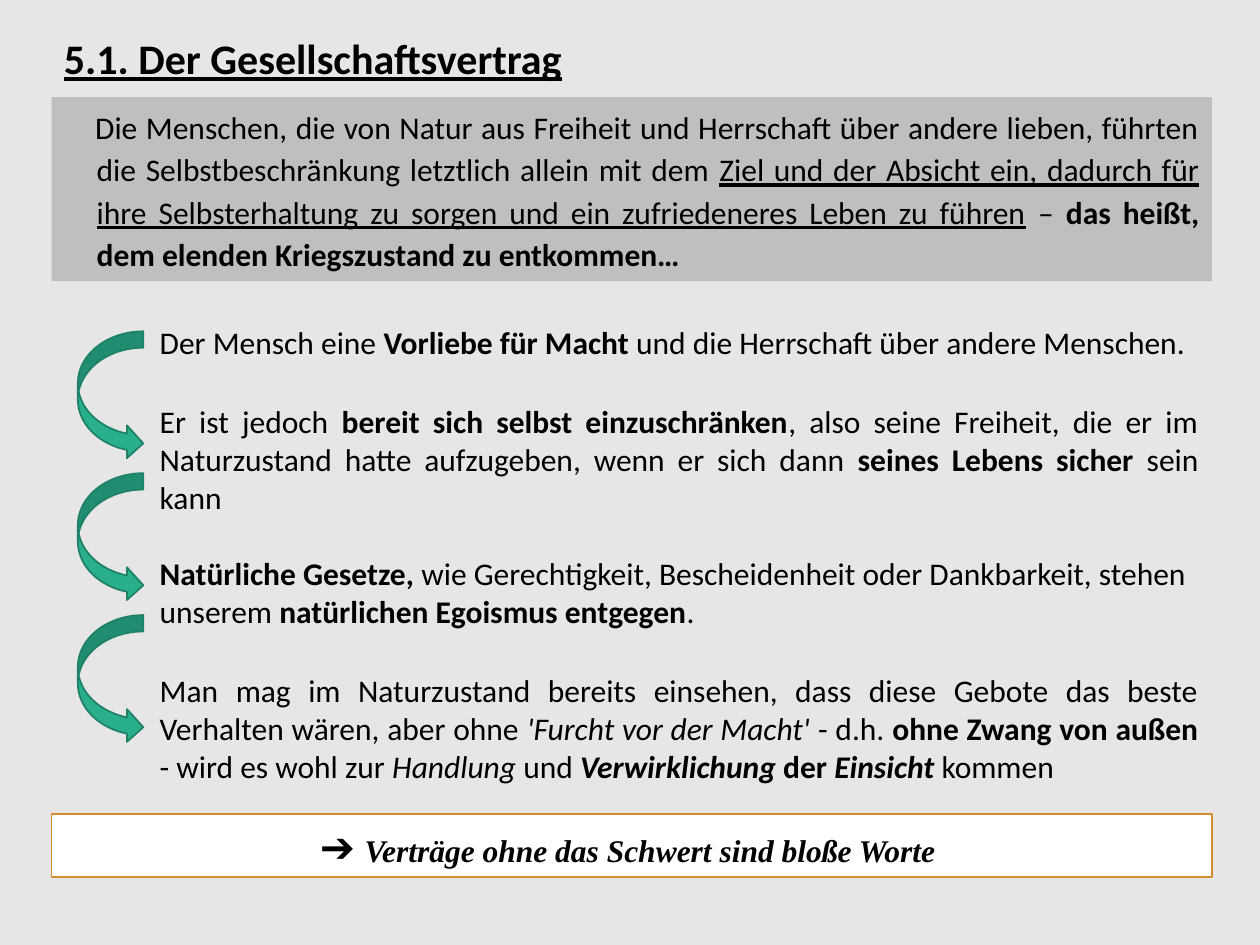
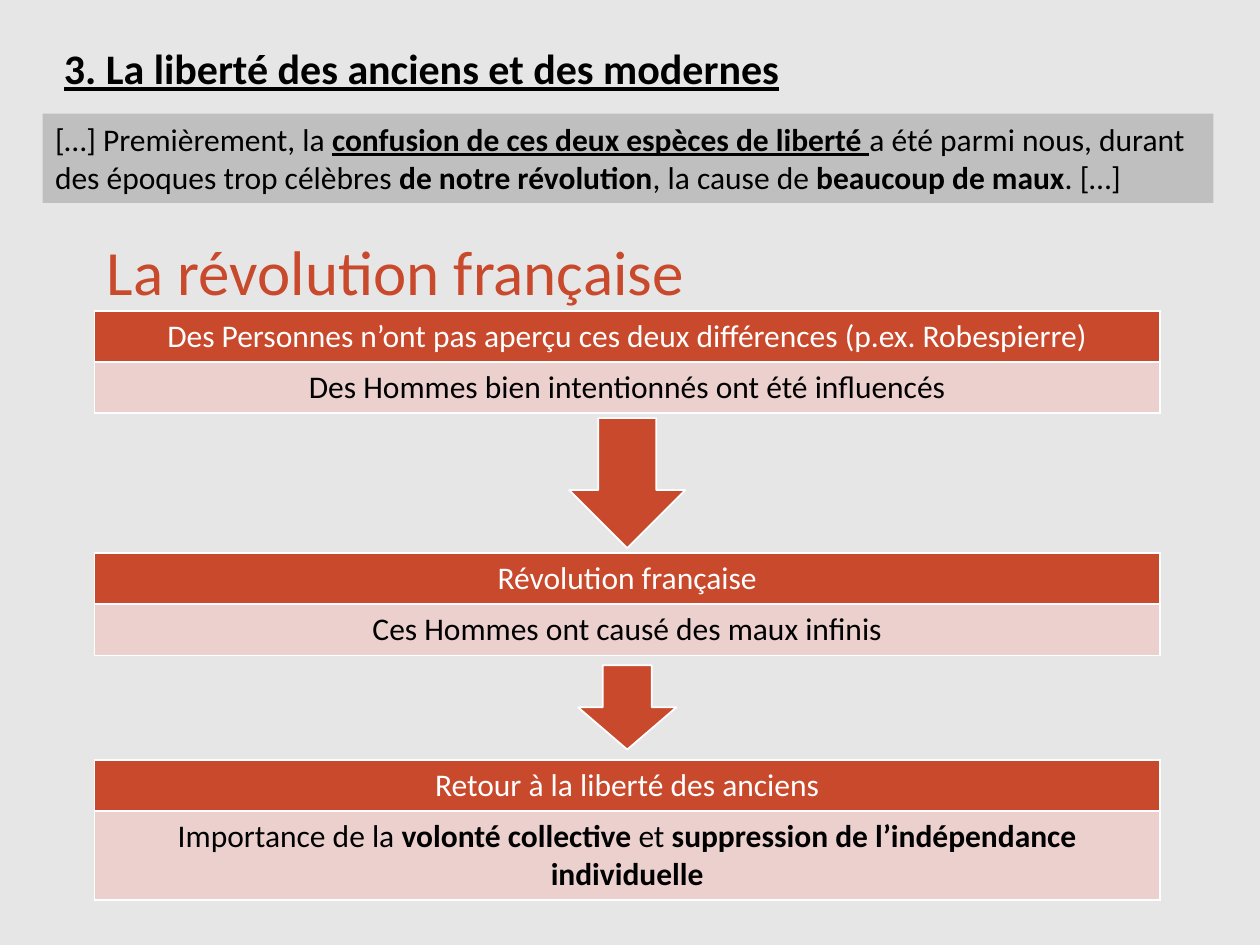
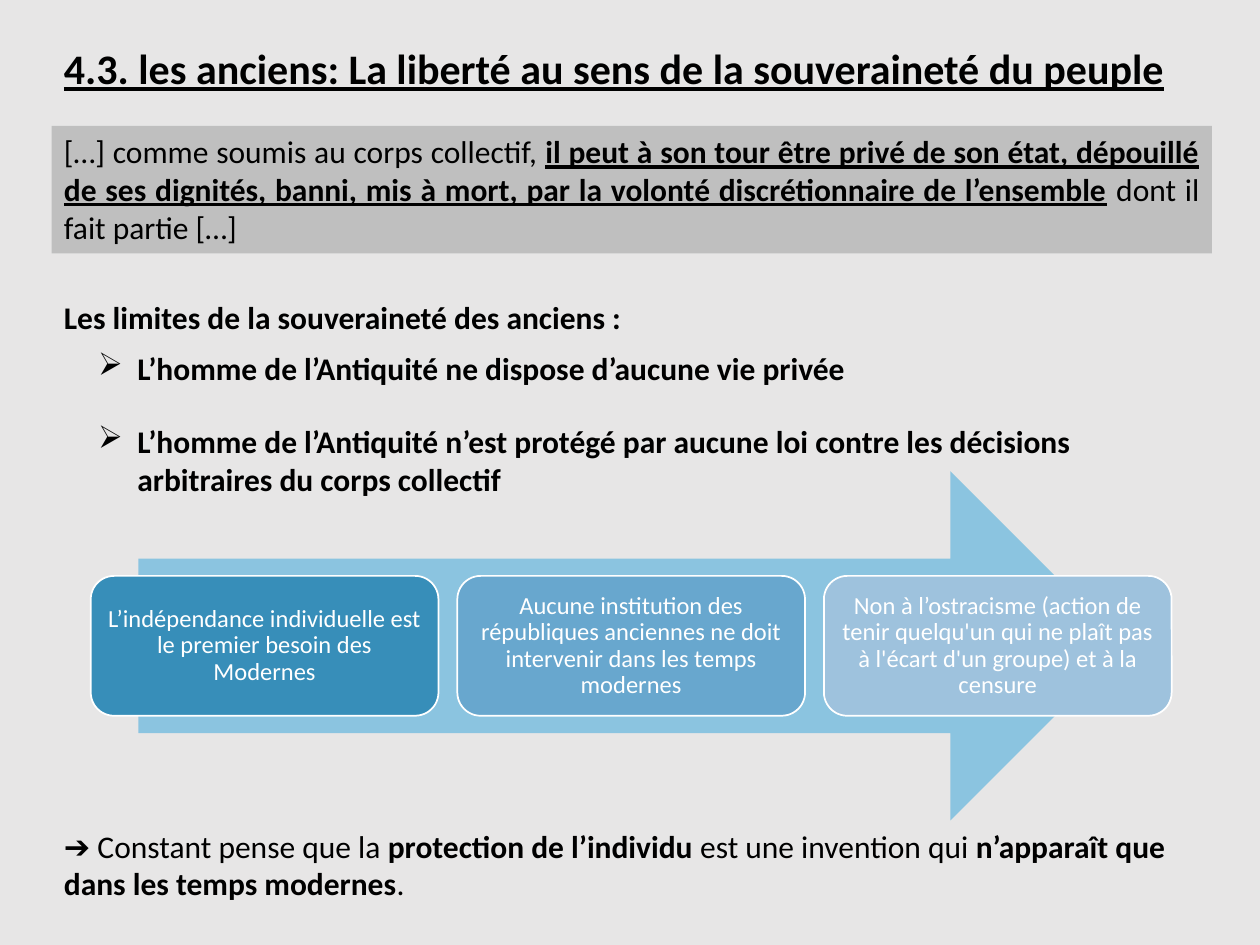
from lxml.etree import SubElement
from pptx import Presentation
from pptx.dml.color import RGBColor
from pptx.enum.shapes import MSO_SHAPE as SHAPE
from pptx.enum.text import MSO_ANCHOR as ANCHOR, MSO_AUTO_SIZE as AUTO, PP_ALIGN as ALIGN
from pptx.oxml.ns import qn
from pptx.util import Cm, Pt

rgb = RGBColor.from_string
BACK, QUOTE, BLACK, WHITE = "E7E6E6", "BFBFBF", "000000", "FFFFFF"
RED, PINK = "C9492C", "EBD0CD"
GREEN, DARK_GREEN, ORANGE = "29AF8C", "1E8168", "D58C2E"
LEFT, WIDTH = 1.04, 23.39
TITLE = dict(size=24, style="bu", wrap=False)


def write(tf, text, size=18, color=BLACK, font="Calibri", style="", align=None,
          spacing=None, indent=None, bullet=None, wrap=True, auto=AUTO.SHAPE_TO_FIT_TEXT):
    """Fill a text frame; text is a string or a list of strings and (string, style) pairs."""
    if hasattr(tf, "auto_size"):
        tf.word_wrap, tf.auto_size = wrap, auto
    p = tf.paragraphs[0]
    pPr = p._p.get_or_add_pPr()
    if bullet:
        SubElement(pPr, qn("a:buChar"), char=bullet)
    if indent:
        pPr.set("marL", str(Cm(indent[0])))
        pPr.set("indent", str(Cm(indent[1])))
    p.alignment, p.line_spacing = align, spacing
    for part in [text] if isinstance(text, str) else text:
        words, flags, *face = (part, style) if isinstance(part, str) else part
        r = p.add_run()
        r.text = words
        r.font.name, r.font.size = (face or [font])[0], Pt(size)
        r.font.color.rgb = rgb(color)
        r.font.bold, r.font.italic, r.font.underline = ("b" in flags, "i" in flags, "u" in flags)
    return p


def add_box(s, x, y, w, h, kind=None, fill=None, line=None):
    """Add a text box, or a preset shape if a kind is given; lengths in cm."""
    place = Cm(x), Cm(y), Cm(w), Cm(h)
    if kind is None:
        return s.shapes.add_textbox(*place).text_frame
    sp = s.shapes.add_shape(kind, *place)
    sp.shadow.inherit = False
    sp.fill.solid()
    sp.fill.fore_color.rgb = rgb(fill)
    if line:
        sp.line.color.rgb, sp.line.width = rgb(line), Pt(1)
    else:
        sp.line.fill.background()
    sp.text_frame.vertical_anchor = ANCHOR.TOP
    return sp.text_frame


prs = Presentation()
prs.slide_width, prs.slide_height = Cm(25.4), Cm(19.05)

# Slides with background, title and quotation band
openings = [
    ("5.1. Der Gesellschaftsvertrag", (0.53, 10.67), (LEFT, 1.96, WIDTH, 3.71),
     ["Die Menschen, die von Natur aus Freiheit und Herrschaft über andere lieben, führten "
      "die Selbstbeschränkung letztlich allein mit dem ",
      ("Ziel und der Absicht ein, dadurch für ihre Selbsterhaltung zu sorgen und ein "
       "zufriedeneres Leben zu führen", "u"), " – ",
      ("das heißt, dem elenden Kriegszustand zu entkommen…", "b")],
     dict(align=ALIGN.JUSTIFY, indent=(0.66, -0.03), spacing=1.12)),
    ("3. La liberté des anciens et des modernes", (0.74, 15.24), (0.86, 2.29, 23.6, 1.8),
     ["[…] Premièrement, la ", ("confusion de ces deux espèces de liberté ", "bu"),
      "a été parmi nous, durant des époques trop célèbres ", ("de notre révolution", "b"),
      ", la cause de ", ("beaucoup de maux", "b"), ". […]"], {}),
    ("4.3. les anciens: La liberté au sens de la souveraineté du peuple", (0.74, 22.91),
     (LEFT, 2.54, WIDTH, 2.57),
     ["[…] comme soumis au corps collectif, ",
      ("il peut à son tour être privé de son état, dépouillé de ses dignités, banni, mis à "
       "mort, par la volonté discrétionnaire de l’ensemble", "bu"),
      " dont il fait partie […]"], dict(align=ALIGN.JUSTIFY)),
]
slides = []
for title, (top, width), band, quote, quote_format in openings:
    s = prs.slides.add_slide(prs.slide_layouts[6])
    s.background.fill.solid()
    s.background.fill.fore_color.rgb = rgb(BACK)
    write(add_box(s, LEFT, top, width, 1.27), title, **TITLE)
    write(add_box(s, *band, SHAPE.RECTANGLE, QUOTE), quote, **quote_format)
    slides.append(s)
contract, revolution, ancients = slides

# Slide 1: steps of the argument
steps = [
    (6.38, 1.8, None, ["Der Mensch eine ", ("Vorliebe für Macht ", "b"),
                       "und die Herrschaft über andere Menschen."]),
    (7.98, 2.57, ALIGN.JUSTIFY,
     ["Er ist jedoch ", ("bereit sich selbst einzuschränken", "b"),
      ", also seine Freiheit, die er im Naturzustand hatte aufzugeben, wenn er sich dann ",
      ("seines Lebens sicher ", "b"), "sein kann "]),
    (11.05, 1.8, None,
     [("Natürliche Gesetze, ", "b"),
      "wie Gerechtigkeit, Bescheidenheit oder Dankbarkeit, stehen unserem ",
      ("natürlichen Egoismus entgegen", "b"), "."]),
    (13.41, 2.57, ALIGN.JUSTIFY,
     ["Man mag im Naturzustand bereits einsehen, dass diese Gebote das beste Verhalten "
      "wären, aber ohne ", ("'Furcht vor der Macht'", "i"), " - d.h. ",
      ("ohne Zwang von außen ", "b"), "- wird es wohl zur ", ("Handlung", "i"), " und ",
      ("Verwirklichung", "bi"), (" der ", "b"), ("Einsicht ", "bi"), "kommen"]),
]
for top, height, align, text in steps:
    write(add_box(contract, 2.97, top, 21.44, height), text, align=align)
for i in range(3):
    add_box(contract, 1.57, 6.68 + 2.86 * i, 1.32, 2.59,
            SHAPE.CURVED_RIGHT_ARROW, GREEN, DARK_GREEN)

# Slide 1: conclusion
tf = add_box(contract, LEFT, 16.41, WIDTH, 1.27, SHAPE.RECTANGLE, WHITE, ORANGE)
p = write(tf, [("➔ ", "b"), ("Verträge ohne das Schwert sind bloße Worte ", "bi", "Times New Roman")],
          align=ALIGN.CENTER)
p.runs[0].font.size = Pt(24)

# Slide 2: three stages as tables
TABLE_LEFT, TABLE_WIDTH, ROW = 1.9, 21.49, 1.03
write(add_box(revolution, TABLE_LEFT, 4.57, 12.27, 1.8), "La révolution française",
      size=36, color=RED, wrap=False)
stages = [
    (6.27, ROW, "Des Personnes n’ont pas aperçu ces deux différences (p.ex. Robespierre)",
     "Des Hommes bien intentionnés ont été influencés"),
    (11.15, ROW, "Révolution française", "Ces Hommes ont causé des maux infinis"),
    (15.32, 1.79, "Retour à la liberté des anciens",
     ["Importance de la ", ("volonté collective ", "b"), "et ",
      ("suppression de l’indépendance individuelle", "b")]),
]
for top, body_height, head, body in stages:
    table = revolution.shapes.add_table(2, 1, Cm(TABLE_LEFT), Cm(top), Cm(TABLE_WIDTH),
                                        Cm(ROW + body_height)).table
    table.first_row = table.horz_banding = False
    rows = [(head, ROW, RED, WHITE), (body, body_height, PINK, BLACK)]
    for i, (text, height, fill, color) in enumerate(rows):
        table.rows[i].height = Cm(height)
        cell = table.cell(i, 0)
        tcPr = cell._tc.get_or_add_tcPr()
        for side in "LRTB":
            ln = SubElement(tcPr, qn(f"a:ln{side}"), w=str(Pt(1)))
            SubElement(SubElement(ln, qn("a:solidFill")), qn("a:srgbClr"), val=WHITE)
        cell.fill.solid()
        cell.fill.fore_color.rgb = rgb(fill)
        write(cell.text_frame, text, color=color, align=ALIGN.CENTER, wrap=None, auto=None)

# Slide 2: arrows centred between the tables
for top, width, height in [(8.43, 2.34, 2.62), (13.41, 1.98, 1.7)]:
    add_box(revolution, TABLE_LEFT + (TABLE_WIDTH - width) / 2, top, width, height,
            SHAPE.DOWN_ARROW, RED, WHITE)

# Slide 3: limits of sovereignty
write(add_box(ancients, LEFT, 5.51, WIDTH, 1.3),
      "Les limites de la souveraineté des anciens :", style="b", spacing=1.5)
limits = [
    (6.91, 15.7, 1.02, False, "L’homme de l’Antiquité ne dispose d’aucune vie privée"),
    (8.38, 20.29, 1.8, True, "L’homme de l’Antiquité n’est protégé par aucune loi contre les "
                             "décisions arbitraires du corps collectif"),
]
for top, width, height, wrap, text in limits:
    write(add_box(ancients, 1.73, top, width, height), text, style="b", wrap=wrap,
          indent=(0.79, -0.79), bullet="➢")

# Slide 3: cards on the arrow
add_box(ancients, 2.79, 9.5, 19.89, 7.04, SHAPE.RIGHT_ARROW, "8BC4E0")
cards = [
    ("378EB9", "L’indépendance individuelle est le premier besoin des Modernes"),
    ("68A7CE", "Aucune institution des républiques anciennes ne doit intervenir dans les "
               "temps modernes"),
    ("9EC2DD", "Non à l’ostracisme (action de tenir quelqu'un qui ne plaît pas à l'écart d'un "
               "groupe) et à la censure"),
]
for i, (fill, text) in enumerate(cards):
    tf = add_box(ancients, 1.83 + 7.39 * i, 11.61, 7.01, 2.82, SHAPE.ROUNDED_RECTANGLE, fill, WHITE)
    tf.vertical_anchor = ANCHOR.MIDDLE
    tf.margin_left = tf.margin_right = tf.margin_top = tf.margin_bottom = Cm(0.15)
    write(tf, text, size=14, color=WHITE, align=ALIGN.CENTER, spacing=0.9, auto=AUTO.NONE)

# Slide 3: conclusion
write(add_box(ancients, LEFT, 16.54, WIDTH, 1.8),
      ["➔ Constant pense que la ", ("protection de l’individu ", "b"),
       "est une invention qui ", ("n’apparaît que dans les temps modernes", "b"), "."])

prs.save("out.pptx")
